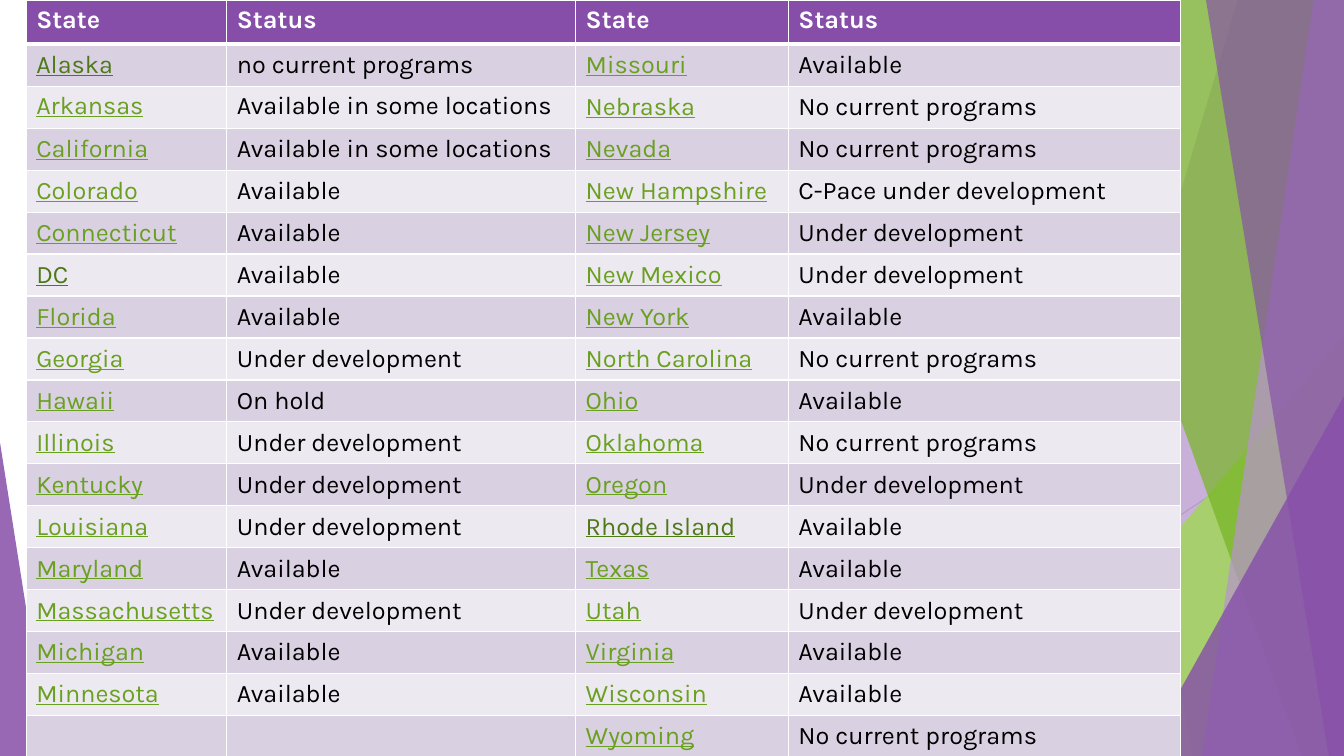
import pptx
import pptx.dml.color
import pptx.enum.shapes
import pptx.enum.text
import pptx.oxml.ns
import pptx.util
from lxml import etree

Inches = pptx.util.Inches
RGB = pptx.dml.color.RGBColor
KIND = pptx.enum.shapes.MSO_SHAPE
ANCHOR = pptx.enum.text.MSO_ANCHOR
qn = pptx.oxml.ns.qn

WHITE = RGB(0xFF, 0xFF, 0xFF)
BLACK = RGB(0, 0, 0)
PURPLE = RGB(0x86, 0x4E, 0xA9)
LILAC = RGB(0xB7, 0x93, 0xCD)
LIME = RGB(0x9A, 0xDB, 0x46)
GREEN = RGB(0x76, 0xB5, 0x23)
LINK = RGB(0x69, 0xA0, 0x20)
SEEN = RGB(0x4E, 0x79, 0x18)
ODD = RGB(0xD9, 0xD0, 0xE2)
EVEN = RGB(0xED, 0xE9, 0xF1)
GRAY = RGB(0xBF, 0xBF, 0xBF)
PALE = RGB(0xD9, 0xD9, 0xD9)

WIDE, HIGH = 13.33, 7.5
TOP = -0.01

deck = pptx.Presentation()
deck.slide_width, deck.slide_height = Inches(WIDE), Inches(HIGH)
slide = deck.slides.add_slide(deck.slide_layouts[6])
shapes = slide.shapes


def tint(shape, color, alpha):
    """Fill a shape with a see-through color (alpha in percent), no outline."""
    shape.shadow.inherit = False
    shape.line.fill.background()
    shape.fill.solid()
    shape.fill.fore_color.rgb = color
    tone = shape.fill._xPr.find(qn("a:solidFill"))[0]
    etree.SubElement(tone, qn("a:alpha"), val=str(alpha * 1000))


def edge(cell, side, width):
    """Draw one white cell border; side is L, R, T or B, width in points."""
    props = cell._tc.get_or_add_tcPr()
    line = etree.SubElement(props, qn("a:ln" + side), w=str(pptx.util.Pt(width)))
    fill = etree.SubElement(line, qn("a:solidFill"))
    etree.SubElement(fill, qn("a:srgbClr"), val=str(WHITE))


# Thin rays behind the shards
for x1, y1, x2, color in [(10.25, 0, 11.58, GRAY), (WIDE, 4.03, 8.12, PALE)]:
    ray = shapes.add_connector(
        pptx.enum.shapes.MSO_CONNECTOR.STRAIGHT,
        Inches(x1), Inches(y1), Inches(x2), Inches(HIGH))
    ray.line.color.rgb = color
    ray.line.width = pptx.util.Pt(0.75)
    etree.SubElement(ray._element.spPr, qn("a:effectLst"))

# Shards: ("band", top x, bottom x) reaches the right edge of the slide;
# ("peak", left, top, width, apex) is a triangle standing on the bottom edge
SHARDS = [
    (("band", 12.28, 10.04), PURPLE, 30),
    (("band", 10.5, 11.83), PURPLE, 20),
    (("peak", 9.77, 3.33, 3.56, 1), LIME, 72),
    (("band", 10.21, 12.91), GREEN, 70),
    (("band", 13.03, 11.92), LILAC, 70),
    (("band", 11.96, 13.18), PURPLE, 65),
    (("peak", 11.34, 3.93, 1.99, 1), PURPLE, 80),
    (("peak", 0, 4.39, 0.49, 0), PURPLE, 85),
]
for (kind, *dims), color, alpha in SHARDS:
    if kind == "band":
        head, foot = dims
        pen = shapes.build_freeform(Inches(head), Inches(TOP))
        pen.add_line_segments([
            (Inches(x), Inches(y))
            for x, y in [(WIDE, TOP), (WIDE, HIGH), (foot, HIGH)]])
        shard = pen.convert_to_shape()
    else:
        left, top, width, apex = dims
        shard = shapes.add_shape(
            KIND.ISOSCELES_TRIANGLE,
            Inches(left), Inches(top), Inches(width), Inches(HIGH - top))
        shard.adjustments[0] = apex
    tint(shard, color, alpha)

# Table of states
YES, NONE, SOON = "Available", "No current programs", "Under development"
SOME = "Available in some locations"
ROWS = [
    ("State", "Status", "State", "Status"),
    ("Alaska", "no current programs", "Missouri", YES),
    ("Arkansas", SOME, "Nebraska", NONE),
    ("California", SOME, "Nevada", NONE),
    ("Colorado", YES, "New Hampshire", "C-Pace under development"),
    ("Connecticut", YES, "New Jersey", SOON),
    ("DC", YES, "New Mexico", SOON),
    ("Florida", YES, "New York", YES),
    ("Georgia", SOON, "North Carolina", NONE),
    ("Hawaii", "On hold", "Ohio", YES),
    ("Illinois", SOON, "Oklahoma", NONE),
    ("Kentucky", SOON, "Oregon", SOON),
    ("Louisiana", SOON, "Rhode Island", YES),
    ("Maryland", YES, "Texas", YES),
    ("Massachusetts", SOON, "Utah", SOON),
    ("Michigan", YES, "Virginia", YES),
    ("Minnesota", YES, "Wisconsin", YES),
    ("", "", "Wyoming", NONE),
]
VISITED = {"Alaska", "DC", "Rhode Island"}
COLS = [1.99, 3.46, 2.11, 3.89]
TALL, HEAD = 7.52, 0.44

table = shapes.add_table(
    len(ROWS), len(COLS),
    Inches(0.26), 0, Inches(sum(COLS)), Inches(TALL)).table
table.horz_banding = False
for col, width in zip(table.columns, COLS):
    col.width = Inches(width)

for r, row in enumerate(ROWS):
    table.rows[r].height = Inches(HEAD if r == 0 else (TALL - HEAD) / (len(ROWS) - 1))
    for c, text in enumerate(row):
        cell = table.cell(r, c)
        for side in "LRTB":
            thick = (r, side) in [(0, "B"), (1, "T")]
            edge(cell, side, 3 if thick else 1)
        cell.fill.solid()
        cell.fill.fore_color.rgb = PURPLE if r == 0 else ODD if r % 2 else EVEN
        high = r == 0 or (r == 2 and c < 2)
        cell.vertical_anchor = ANCHOR.TOP if high else ANCHOR.MIDDLE
        cell.text = text
        font = cell.text_frame.paragraphs[0].font
        font.name, font.size = "Karla", pptx.util.Pt(18)
        font.bold = r == 0
        if r == 0:
            font.color.rgb = WHITE
        elif c % 2:
            font.color.rgb = BLACK
        else:
            font.color.rgb = SEEN if text in VISITED else LINK
            font.underline = True

deck.save("out.pptx")
